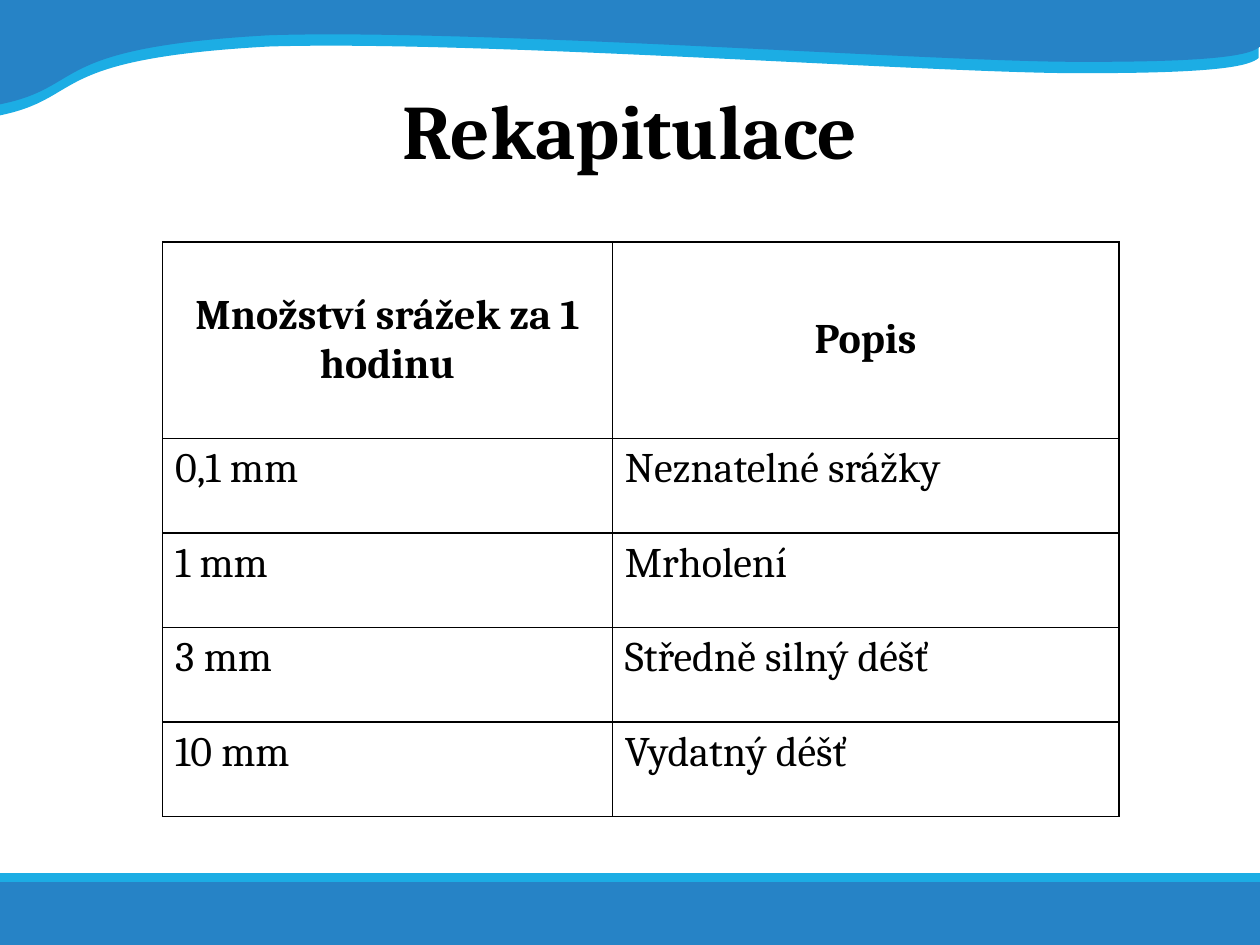
from lxml import etree
from pptx import Presentation
from pptx.dml.color import RGBColor
from pptx.enum.shapes import MSO_SHAPE
from pptx.enum.text import MSO_ANCHOR, PP_ALIGN
from pptx.oxml import parse_xml
from pptx.oxml.ns import nsdecls, qn
from pptx.util import Inches, Pt

BLUE = RGBColor(0x26, 0x83, 0xC6)
CYAN = RGBColor(0x1C, 0xAD, 0xE4)
BLACK = RGBColor(0, 0, 0)
FONT = "Cambria"

# Wave outline: right side, then two controls and an end for each curve
WAVE_SIDE = [(10, 0), (10, 0.37)]
WAVE_CURVES = [
    (9.93, 0.43), (9.72, 0.5), (8.41, 0.49),
    (7.1, 0.47), (3.73, 0.23), (2.14, 0.28),
    (0.34, 0.38), (0.7, 0.69), (-0.01, 0.83),
]
ROWS = [
    ("Množství srážek za 1 hodinu", "Popis"),
    ("0,1 mm", "Neznatelné srážky"),
    ("1 mm", "Mrholení"),
    ("3 mm", "Středně silný déšť"),
    ("10 mm", "Vydatný déšť"),
]


def paint(shape, color):
    shape.shadow.inherit = False
    shape.fill.solid()
    shape.fill.fore_color.rgb = color
    shape.line.fill.background()


def style_text(frame, size, bold):
    font = frame.paragraphs[0].runs[0].font
    font.name = FONT
    font.size = Pt(size)
    font.bold = bold
    font.color.rgb = BLACK


deck = Presentation()
deck.slide_width, deck.slide_height = Inches(10), Inches(7.5)
page = deck.slides.add_slide(deck.slide_layouts[5])

# Waves at the top: the cyan one lies a little lower, behind the blue one
for color, left, top in ((CYAN, -0.02, 0.08), (BLUE, -0.01, -0.01)):
    builder = page.shapes.build_freeform(Inches(0), Inches(-0.01))
    builder.add_line_segments([(Inches(x), Inches(y))
                               for x, y in WAVE_SIDE + WAVE_CURVES])
    wave = builder.convert_to_shape()
    wave.left, wave.top = Inches(left), Inches(top)
    paint(wave, color)

    # Turn each three line points after the right side into one Bézier curve
    lines = list(wave.element.iter(qn("a:lnTo")))
    curve_lines = lines[len(WAVE_SIDE):len(WAVE_SIDE) + len(WAVE_CURVES)]
    for first in range(0, len(curve_lines), 3):
        curve = etree.Element(qn("a:cubicBezTo"))
        curve_lines[first].addprevious(curve)
        for line in curve_lines[first:first + 3]:
            curve.append(line[0])
            line.getparent().remove(line)

# Bands at the bottom
for color, top, height in ((BLUE, 7, 0.5), (CYAN, 6.93, 0.07)):
    band = page.shapes.add_shape(MSO_SHAPE.RECTANGLE, Inches(0), Inches(top),
                                 Inches(10), Inches(height))
    paint(band, color)

# Title, brought in front of the waves
title = page.shapes.title
page.shapes.element.append(title.element)
title.left, title.top = Inches(0.5), Inches(0.3)
title.width, title.height = Inches(9), Inches(1.45)
title.text_frame.text = "Rekapitulace"
title.text_frame.vertical_anchor = MSO_ANCHOR.MIDDLE
title.text_frame.paragraphs[0].alignment = PP_ALIGN.CENTER
style_text(title.text_frame, 44, True)

# Table of rainfall amounts
table = page.shapes.add_table(len(ROWS), 2, Inches(1.29), Inches(1.92),
                              Inches(7.59), Inches(4.56)).table
table.horz_banding = False
table.columns[0].width, table.columns[1].width = Inches(3.57), Inches(4.02)
for row_index, texts in enumerate(ROWS):
    header = row_index == 0
    table.rows[row_index].height = Inches(1.56 if header else 0.75)
    for column_index, text in enumerate(texts):
        cell = table.cell(row_index, column_index)
        cell.text_frame.text = text
        style_text(cell.text_frame, 24, header)
        if header:
            cell.vertical_anchor = MSO_ANCHOR.MIDDLE
            cell.text_frame.paragraphs[0].alignment = PP_ALIGN.CENTER
        cell.fill.background()
        # Borders come before the fill in the cell properties
        properties = cell._tc.get_or_add_tcPr()
        for position, side in enumerate(("lnL", "lnR", "lnT", "lnB")):
            properties.insert(position, parse_xml(
                f'<a:{side} {nsdecls("a")} w="{Pt(1)}"><a:solidFill>'
                f'<a:srgbClr val="{BLACK}"/></a:solidFill></a:{side}>'))

deck.save("out.pptx")
